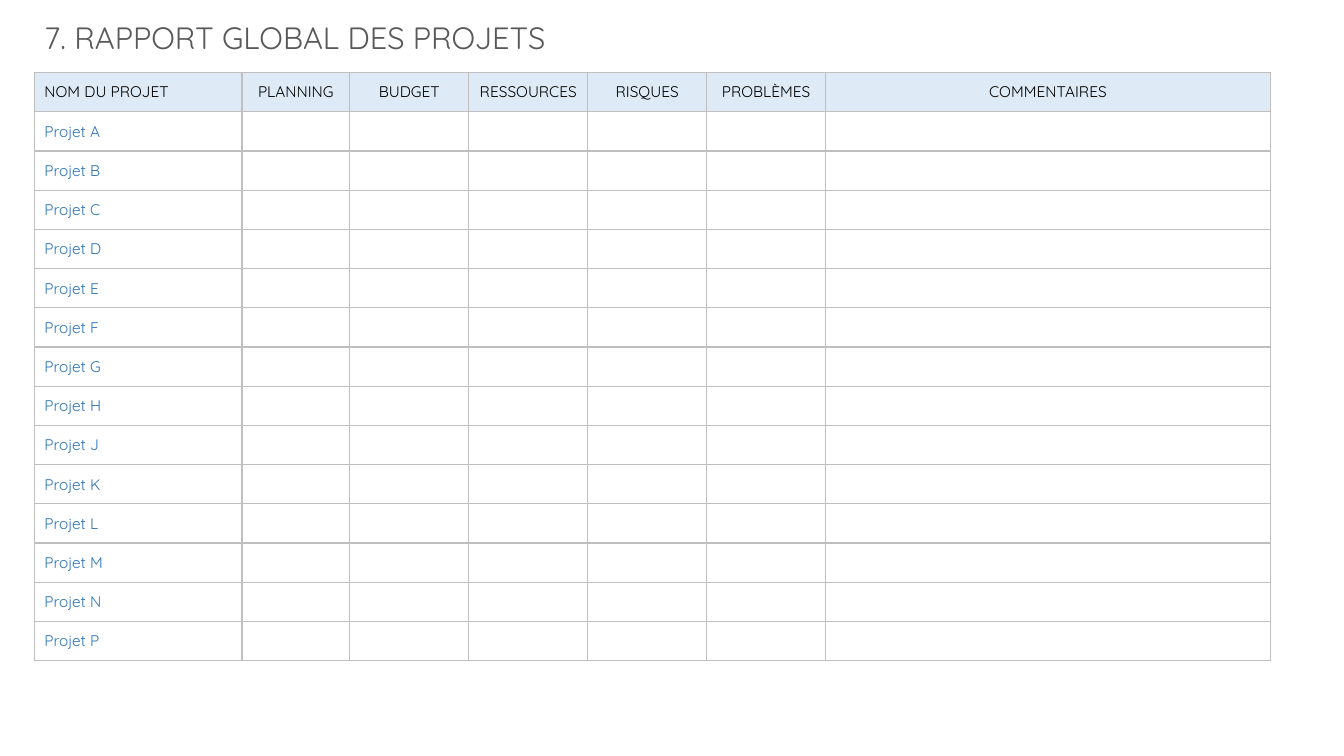
from dataclasses import dataclass

from lxml.etree import SubElement
from pptx import Presentation
from pptx.dml.color import RGBColor as RGB
from pptx.enum.text import MSO_ANCHOR as ANCHOR, MSO_AUTO_SIZE as AUTO, PP_ALIGN as ALIGN
from pptx.oxml.ns import qn
from pptx.util import Inches, Pt

# Content
TITLE = "7. RAPPORT GLOBAL DES PROJETS"
COLUMNS = [  # heading, width in inches
    ("NOM DU PROJET", 2.06),
    ("PLANNING", 1.07),
    ("BUDGET", 1.18),
    ("RESSOURCES", 1.18),
    ("RISQUES", 1.18),
    ("PROBLÈMES", 1.18),
    ("COMMENTAIRES", 4.41),
]
PROJECTS = [f"Projet {letter}" for letter in "ABCDEFGHJKLMNP"]

# Layout, in inches
SLIDE_W, SLIDE_H = 13.33, 7.5
LEFT = 0.34
TITLE_TOP, TITLE_W, TITLE_H = 0.14, 5.18, 0.47
TABLE_TOP, TABLE_H = 0.72, 5.84


@dataclass(frozen=True)
class Theme:
    font: str = "Quicksand"
    title_size: int = 22
    cell_size: int = 11
    title: str = "595959"
    heading: str = "000000"
    project: str = "2E75B6"
    heading_fill: str = "DEEBF7"
    body_fill: str = "FFFFFF"
    border: str = "BFBFBF"
    border_width: int = 1


THEME = Theme()


def style_text(p, size, color, align):
    p.alignment = align
    for r in p.runs:
        r.font.name = THEME.font
        r.font.size = Pt(size)
        r.font.color.rgb = RGB.from_string(color)


def add_borders(cell):
    tc_pr = cell._tc.get_or_add_tcPr()
    for side in ("a:lnL", "a:lnR", "a:lnT", "a:lnB"):
        ln = SubElement(tc_pr, qn(side), w=str(Pt(THEME.border_width)))
        fill = SubElement(ln, qn("a:solidFill"))
        SubElement(fill, qn("a:srgbClr"), val=THEME.border)


def add_title(slide):
    sp = slide.shapes.title
    sp.left, sp.top = Inches(LEFT), Inches(TITLE_TOP)
    sp.width, sp.height = Inches(TITLE_W), Inches(TITLE_H)
    tf = sp.text_frame
    tf.text = TITLE
    tf.word_wrap = False
    tf.auto_size = AUTO.SHAPE_TO_FIT_TEXT
    tf.vertical_anchor = ANCHOR.TOP
    style_text(tf.paragraphs[0], THEME.title_size, THEME.title, ALIGN.LEFT)


def add_report(slide):
    headings, widths = zip(*COLUMNS)
    rows = [headings] + [(name,) + ("",) * (len(COLUMNS) - 1) for name in PROJECTS]
    table = slide.shapes.add_table(
        len(rows), len(COLUMNS), Inches(LEFT), Inches(TABLE_TOP),
        Inches(sum(widths)), Inches(TABLE_H)).table
    table.horz_banding = False
    for column, width in zip(table.columns, widths):
        column.width = Inches(width)

    for i, row in enumerate(rows):
        table.rows[i].height = Inches(TABLE_H / len(rows))
        fill = THEME.body_fill if i else THEME.heading_fill
        color = THEME.project if i else THEME.heading
        for j, text in enumerate(row):
            cell = table.cell(i, j)
            add_borders(cell)
            cell.fill.solid()
            cell.fill.fore_color.rgb = RGB.from_string(fill)
            cell.vertical_anchor = ANCHOR.MIDDLE
            cell.margin_left = cell.margin_right = Inches(0.1)
            cell.margin_top = cell.margin_bottom = 0
            p = cell.text_frame.paragraphs[0]
            p.font.size = Pt(THEME.cell_size)
            if text:
                p.text = text
                style_text(p, THEME.cell_size, color, ALIGN.CENTER if j else ALIGN.LEFT)
                for r in p.runs:
                    r.font.bold = False


def main():
    prs = Presentation()
    prs.slide_width, prs.slide_height = Inches(SLIDE_W), Inches(SLIDE_H)
    slide = prs.slides.add_slide(prs.slide_layouts[5])  # title only
    add_report(slide)
    add_title(slide)
    prs.save("out.pptx")


if __name__ == "__main__":
    main()
